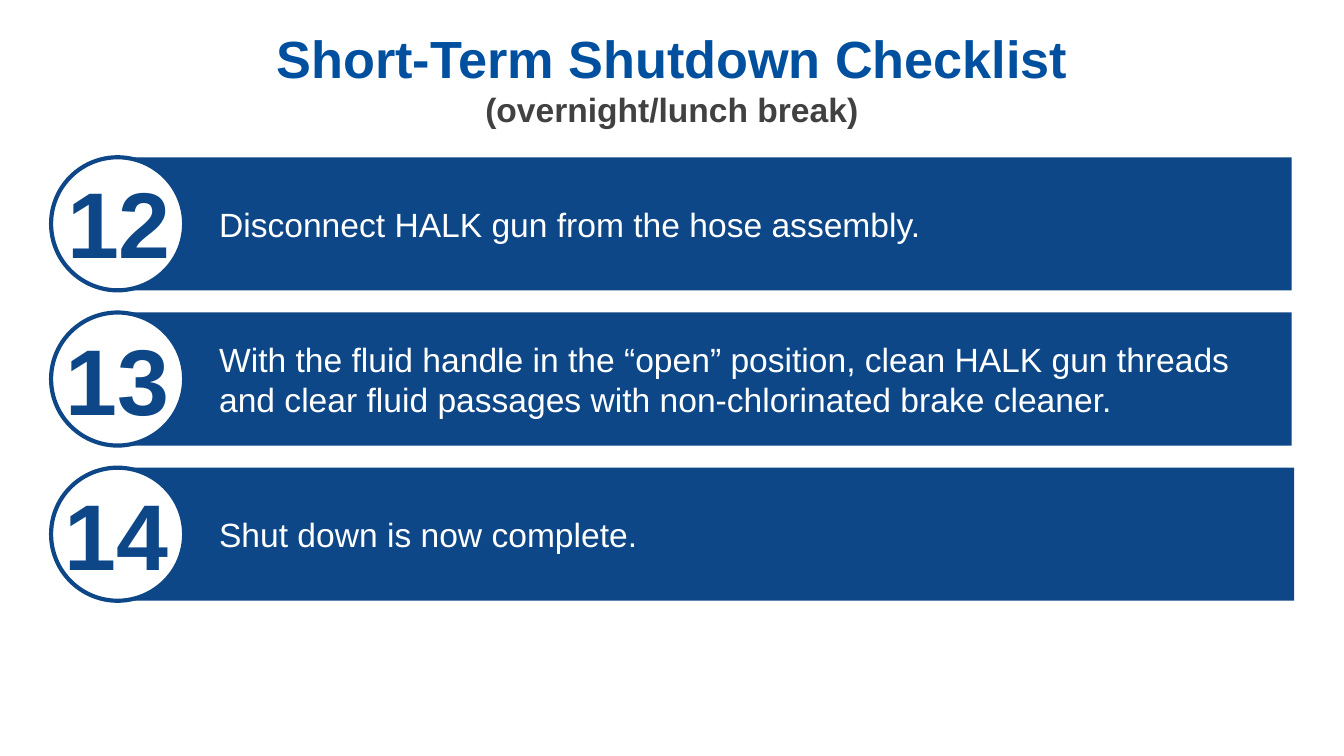
from pptx import Presentation
from pptx.dml.color import RGBColor
from pptx.enum.shapes import MSO_SHAPE
from pptx.enum.text import MSO_ANCHOR, PP_ALIGN
from pptx.util import Inches, Pt

RECT, OVAL = MSO_SHAPE.RECTANGLE, MSO_SHAPE.OVAL
MIDDLE = MSO_ANCHOR.MIDDLE
LEFT, CENTER = PP_ALIGN.LEFT, PP_ALIGN.CENTER
NAVY, WHITE = "0D4787", "FFFFFF"


def style(font, size, color, bold=False):
    font.name = "Arial"
    font.size = Pt(size)
    font.bold = bold
    font.color.rgb = RGBColor.from_string(color)


def add_shape(kind, left, top, width, height, fill):
    shape = slide.shapes.add_shape(
        kind, Inches(left), Inches(top), Inches(width), Inches(height))
    shape.shadow.inherit = False
    shape.fill.solid()
    shape.fill.fore_color.rgb = RGBColor.from_string(fill)
    shape.line.fill.background()
    return shape


prs = Presentation()
prs.slide_width = Inches(10)
prs.slide_height = prs.slide_width * 9 // 16
slide = prs.slides.add_slide(prs.slide_layouts[6])

# Numbered steps: bar width, number position, number, wording
size = 0.99
first, last = 1.17, 3.48
steps = [
    (8.82, 0.39, 1.18, "12", "Disconnect HALK gun from the hose assembly."),
    (8.82, 0.38, 2.35, "13",
     "With the fluid handle in the “open” position, clean HALK gun threads "
     "and clear fluid passages with non-chlorinated brake cleaner."),
    (8.84, 0.37, 3.5, "14", "Shut down is now complete."),
]
pitch = (last - first) / (len(steps) - 1)
for i, (width, num_left, num_top, number, words) in enumerate(steps):
    top = first + i * pitch
    bar = add_shape(RECT, 0.79, top, width, size, NAVY)
    frame = bar.text_frame
    frame.word_wrap = True
    frame.vertical_anchor = MIDDLE
    frame.margin_left, frame.margin_right = Inches(0.84), Inches(0.2)
    para = frame.paragraphs[0]
    para.text = words
    para.alignment = LEFT
    style(para.runs[0].font, 18, WHITE)

    disc = add_shape(OVAL, 0.38, top, size, size, WHITE)
    disc.line.color.rgb = RGBColor.from_string(NAVY)
    disc.line.width = Pt(2.25)

    label = slide.shapes.add_textbox(
        Inches(num_left), Inches(num_top), Inches(size), Inches(0.94))
    label.text_frame.word_wrap = True
    para = label.text_frame.paragraphs[0]
    para.text = number
    para.alignment = CENTER
    style(para.runs[0].font, 50, NAVY, True)

# Title with its smaller second line
title = slide.shapes.add_textbox(0, Inches(0.11), Inches(10), Inches(0.94))
frame = title.text_frame
frame.word_wrap = True
frame.vertical_anchor = MIDDLE
para = frame.paragraphs[0]
para.text = "Short-Term Shutdown Checklist\v(overnight/lunch break)"
para.alignment = CENTER
head, note = para.runs
style(head.font, 28, "00509F", True)
style(note.font, 18, "404140", True)

prs.save("out.pptx")
